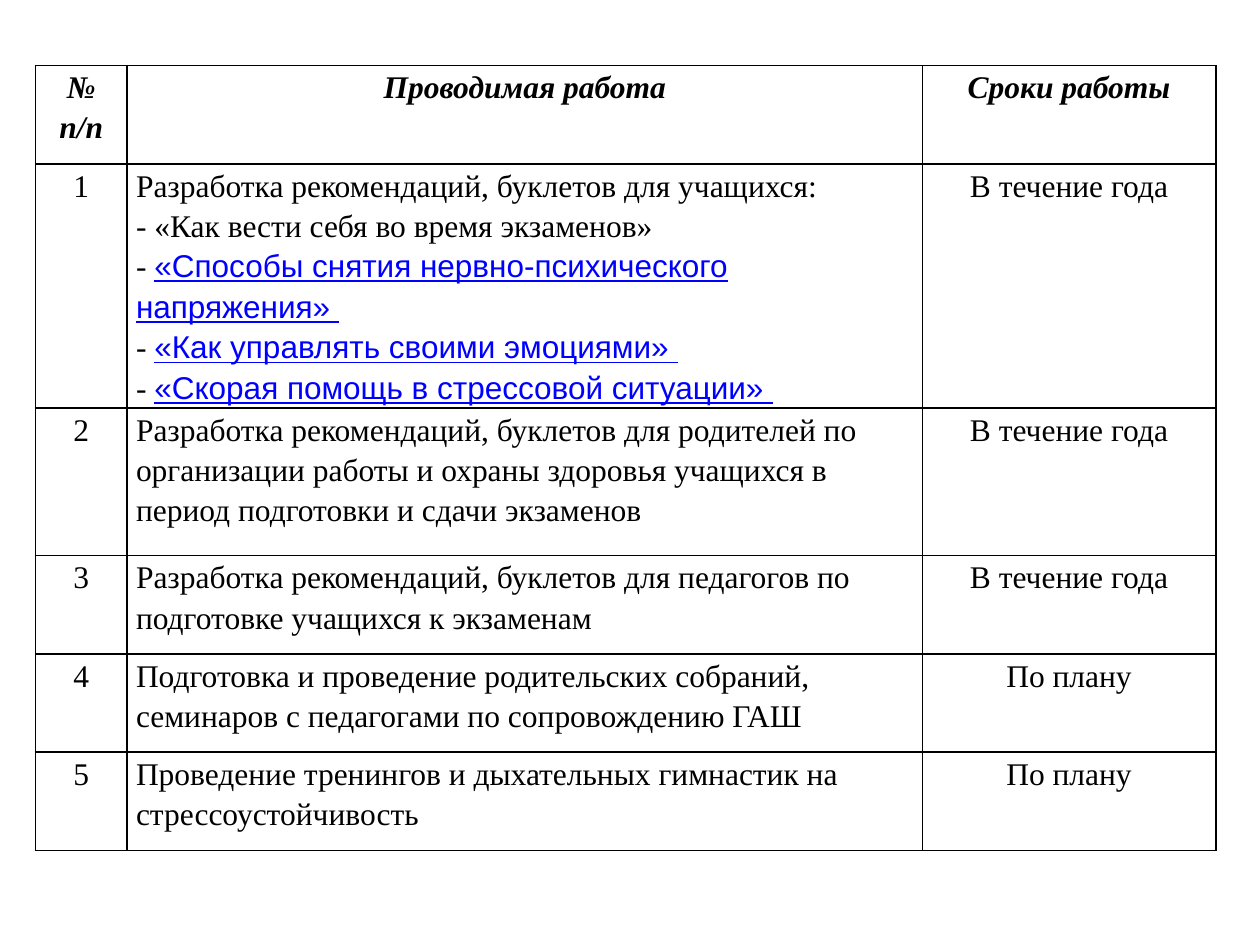
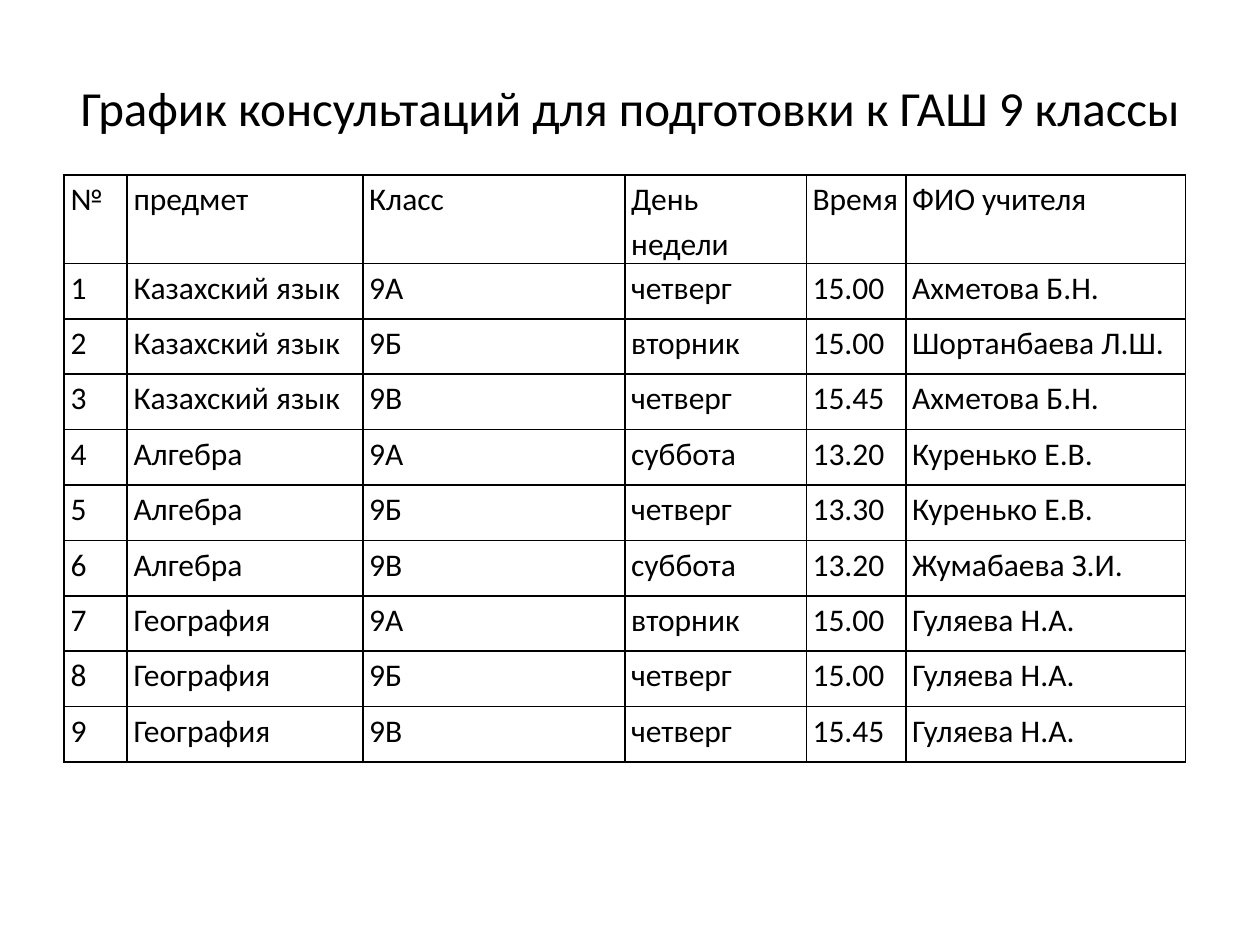
import dataclasses

import lxml.etree
import pptx
import pptx.dml.color
import pptx.enum.text
import pptx.oxml.ns
import pptx.presentation
import pptx.slide
import pptx.table
import pptx.text.text
import pptx.util

Inches = pptx.util.Inches
Pt = pptx.util.Pt
Align = pptx.enum.text.PP_ALIGN

# Shared look
BLACK = pptx.dml.color.RGBColor(0x00, 0x00, 0x00)
LINK_BLUE = pptx.dml.color.RGBColor(0x00, 0x00, 0xFF)
LINK_FONT = "Arial"
CELL_SIZE = Pt(18)
TITLE_SIZE = Pt(28)
LINE_SPACING = 1.15
BORDER_WIDTH = Pt(1)
TITLE_ONLY, BLANK = 5, 6


@dataclasses.dataclass(frozen=True)
class TableSpec:
    left: float
    top: float
    column_widths: list[float]
    row_heights: list[float]
    rows: list[tuple[str, ...]]
    aligns: list[Align]
    font: str
    side_margin: float
    emphasized_header: bool = False


# Work plan; a line starting with the link mark holds a coloured booklet name
LINK_MARK = "> "
BOOKLETS = "\n".join([
    "Разработка рекомендаций, буклетов для учащихся:",
    "- «Как вести себя во время экзаменов»",
    LINK_MARK + "«Способы снятия нервно-психического напряжения» ",
    LINK_MARK + "«Как управлять своими эмоциями» ",
    LINK_MARK + "«Скорая помощь в стрессовой ситуации» ",
])
ALL_YEAR, PLANNED = "В течение года", "По плану"
WORK_PLAN = TableSpec(
    left=0.28,
    top=0.52,
    column_widths=[0.73, 6.31, 2.33],
    row_heights=[0.78, 1.94, 1.17, 0.78, 0.78, 0.78],
    rows=[
        ("№ п/п", "Проводимая работа", "Сроки работы"),
        ("1", BOOKLETS, ALL_YEAR),
        ("2", "Разработка рекомендаций, буклетов для родителей по организации "
              "работы и охраны здоровья учащихся в период подготовки и сдачи "
              "экзаменов", ALL_YEAR),
        ("3", "Разработка рекомендаций, буклетов для педагогов по подготовке "
              "учащихся к экзаменам", ALL_YEAR),
        ("4", "Подготовка и проведение родительских собраний, семинаров с "
              "педагогами по сопровождению ГАШ", PLANNED),
        ("5", "Проведение тренингов и дыхательных гимнастик на "
              "стрессоустойчивость", PLANNED),
    ],
    aligns=[Align.CENTER, Align.LEFT, Align.CENTER],
    font="Times New Roman",
    side_margin=0.07,
    emphasized_header=True,
)

# Consultation timetable
LESSONS = [
    ("Казахский язык", "9А", "четверг", "15.00", "Ахметова Б.Н."),
    ("Казахский язык", "9Б", "вторник", "15.00", "Шортанбаева Л.Ш."),
    ("Казахский язык", "9В", "четверг", "15.45", "Ахметова Б.Н."),
    ("Алгебра", "9А", "суббота", "13.20", "Куренько Е.В."),
    ("Алгебра", "9Б", "четверг", "13.30", "Куренько Е.В."),
    ("Алгебра", "9В", "суббота", "13.20", "Жумабаева З.И."),
    ("География", "9А", "вторник", "15.00", "Гуляева Н.А."),
    ("География", "9Б", "четверг", "15.00", "Гуляева Н.А."),
    ("География", "9В", "четверг", "15.45", "Гуляева Н.А."),
]
TIMETABLE = TableSpec(
    left=0.51,
    top=1.39,
    column_widths=[0.5, 1.87, 2.08, 1.44, 0.79, 2.22],
    row_heights=[0.7] + [0.44] * len(LESSONS),
    rows=[("№", "предмет", "Класс", "День недели", "Время", "ФИО учителя")]
    + [(str(number), *lesson) for number, lesson in enumerate(LESSONS, 1)],
    aligns=[Align.LEFT] * 6,
    font="Calibri",
    side_margin=0.05,
)


def format_span(span: pptx.text.text._Run, font: str, size: pptx.util.Length,
                emphasized: bool = False) -> None:
    span.font.name = font
    span.font.size = size
    span.font.bold = span.font.italic = emphasized
    span.font.color.rgb = BLACK


def write_cell(cell: pptx.table._Cell, text: str, spec: TableSpec,
               align: Align, emphasized: bool) -> None:
    para = cell.text_frame.paragraphs[0]
    para.alignment = align
    para.line_spacing = LINE_SPACING
    for index, line in enumerate(text.split("\n")):
        if index:
            para.add_line_break()
        is_link = line.startswith(LINK_MARK)
        pieces = ["- ", line.removeprefix(LINK_MARK)] if is_link else [line]
        for piece in pieces:
            span = para.add_run()
            span.text = piece
            format_span(span, spec.font, CELL_SIZE, emphasized)
        if is_link:
            span.font.name = LINK_FONT
            span.font.color.rgb = LINK_BLUE
            span.font.underline = True


def add_borders(cell: pptx.table._Cell) -> None:
    qn = pptx.oxml.ns.qn
    properties = cell._tc.get_or_add_tcPr()
    for position, side in enumerate(("a:lnL", "a:lnR", "a:lnT", "a:lnB")):
        border = lxml.etree.Element(qn(side), w=str(BORDER_WIDTH))
        fill = lxml.etree.SubElement(border, qn("a:solidFill"))
        lxml.etree.SubElement(fill, qn("a:srgbClr"), val=str(BLACK))
        properties.insert(position, border)


def draw_table(page: pptx.slide.Slide, spec: TableSpec) -> None:
    table = page.shapes.add_table(
        len(spec.rows), len(spec.column_widths),
        Inches(spec.left), Inches(spec.top),
        Inches(sum(spec.column_widths)), Inches(sum(spec.row_heights)),
    ).table
    table.first_row = table.horz_banding = False
    for column, width in zip(table.columns, spec.column_widths):
        column.width = Inches(width)
    for row, height in zip(table.rows, spec.row_heights):
        row.height = Inches(height)
    for row_index, texts in enumerate(spec.rows):
        is_header = row_index == 0
        for column_index, text in enumerate(texts):
            cell = table.cell(row_index, column_index)
            cell.margin_left = cell.margin_right = Inches(spec.side_margin)
            cell.margin_top = cell.margin_bottom = 0
            cell.fill.background()
            add_borders(cell)
            align = Align.CENTER if is_header and spec.emphasized_header else spec.aligns[column_index]
            write_cell(cell, text, spec, align, is_header and spec.emphasized_header)


def set_title(page: pptx.slide.Slide, text: str) -> None:
    title = page.shapes.title
    title.left, title.top = Inches(0.49), Inches(0.56)
    title.width, title.height = Inches(9.02), Inches(0.57)
    frame = title.text_frame
    frame.text = text
    frame.word_wrap = False
    frame.auto_size = pptx.enum.text.MSO_AUTO_SIZE.SHAPE_TO_FIT_TEXT
    frame.vertical_anchor = pptx.enum.text.MSO_ANCHOR.MIDDLE
    para = frame.paragraphs[0]
    para.alignment = Align.CENTER
    format_span(para.runs[0], "Calibri", TITLE_SIZE)


def add_page(deck: pptx.presentation.Presentation, layout: int) -> pptx.slide.Slide:
    return deck.slides.add_slide(deck.slide_layouts[layout])


def main() -> None:
    deck = pptx.Presentation()
    deck.slide_width, deck.slide_height = Inches(10), Inches(7.5)

    # Work plan page
    draw_table(add_page(deck, BLANK), WORK_PLAN)

    # Timetable page
    page = add_page(deck, TITLE_ONLY)
    set_title(page, "График консультаций для подготовки к ГАШ 9 классы")
    draw_table(page, TIMETABLE)

    deck.save("out.pptx")


if __name__ == "__main__":
    main()
